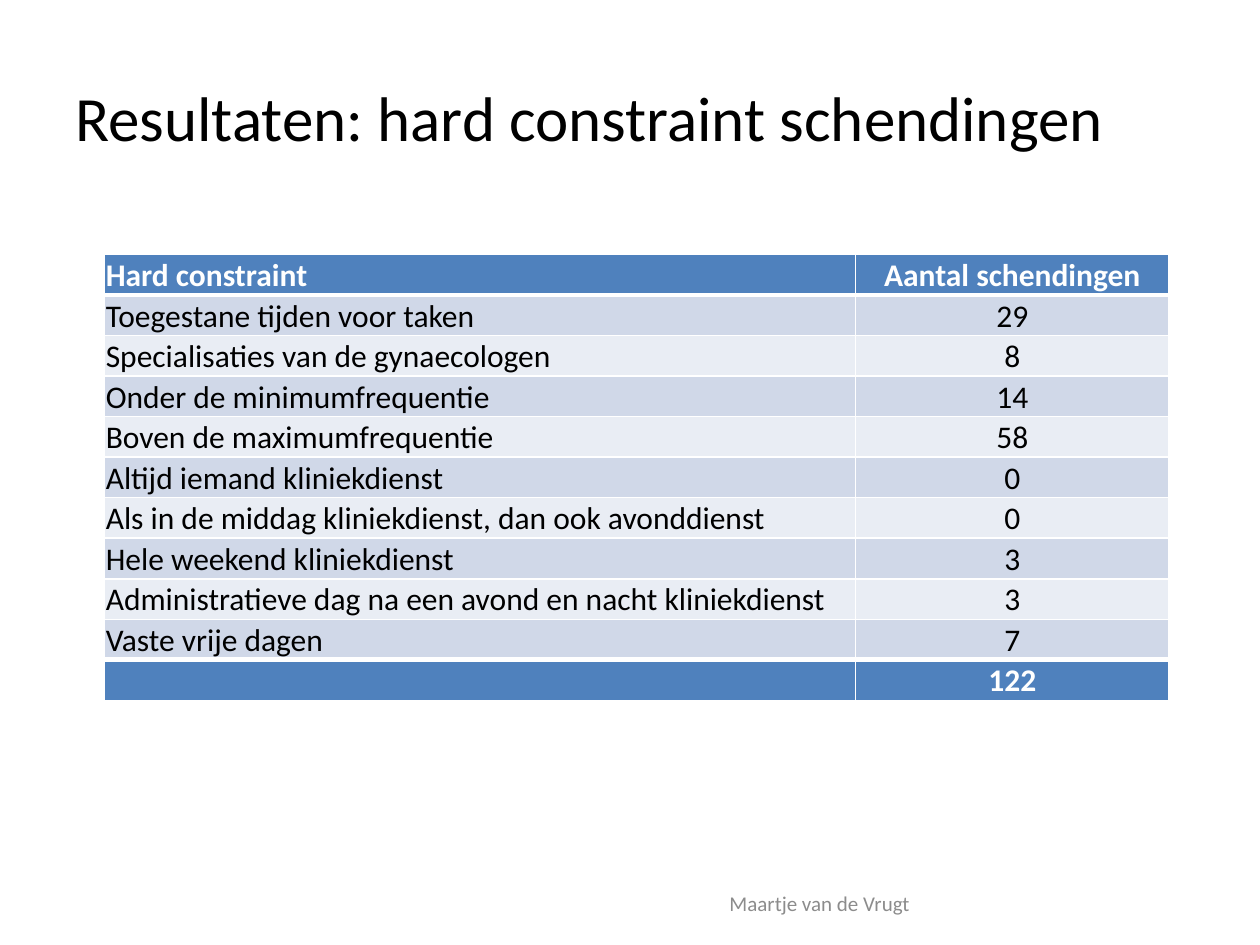
from lxml import etree
from pptx import Presentation
from pptx import util as u
from pptx.dml.color import RGBColor
from pptx.enum import text
from pptx.oxml.ns import qn

WHITE = RGBColor(0xFF, 0xFF, 0xFF)
BLACK = RGBColor(0x00, 0x00, 0x00)
GREY = RGBColor(0x8C, 0x8C, 0x8C)
BLUE = RGBColor(0x4F, 0x81, 0xBD)
BANDS = (RGBColor(0xE9, 0xED, 0xF4), RGBColor(0xD0, 0xD8, 0xE8))
LEFT, CENTER = text.PP_ALIGN.LEFT, text.PP_ALIGN.CENTER

ROWS = [
    ("Hard constraint", "Aantal schendingen"),
    ("Toegestane tijden voor taken", "29"),
    ("Specialisaties van de gynaecologen", "8"),
    ("Onder de minimumfrequentie", "14"),
    ("Boven de maximumfrequentie", "58"),
    ("Altijd iemand kliniekdienst", "0"),
    ("Als in de middag kliniekdienst, dan ook avonddienst", "0"),
    ("Hele weekend kliniekdienst", "3"),
    ("Administratieve dag na een avond en nacht kliniekdienst", "3"),
    ("Vaste vrije dagen", "7"),
    ("", "122"),
]


def write(paragraph, words, alignment, **font_format):
    paragraph.alignment = alignment
    if not words:
        return
    run = paragraph.add_run()
    run.text = words
    run.font.name = "Calibri"
    run.font.color.rgb = font_format.pop("color")
    for name, value in font_format.items():
        setattr(run.font, name, value)


def add_border(cell, side, points):
    """Add a white line; sides must come in the order L, R, T, B, before the fill."""
    properties = cell._tc.get_or_add_tcPr()
    line = etree.SubElement(properties, qn(f"a:ln{side}"), w=str(u.Pt(points)))
    fill = etree.SubElement(line, qn("a:solidFill"))
    etree.SubElement(fill, qn("a:srgbClr"), val=str(WHITE))


presentation = Presentation()
presentation.slide_width = u.Inches(10)
presentation.slide_height = u.Inches(7.5)
slide = presentation.slides.add_slide(presentation.slide_layouts[6])

# Title and footer
for words, box, alignment, size, color in [
    ("Resultaten: hard constraint schendingen", (0.5, 0.3, 9, 1.25), LEFT, 36, BLACK),
    ("Maartje van de Vrugt", (4.92, 6.97, 3.17, 0.4), CENTER, 12, GREY),
]:
    shape = slide.shapes.add_textbox(*map(u.Inches, box))
    frame = shape.text_frame
    frame.word_wrap = True
    frame.vertical_anchor = text.MSO_ANCHOR.MIDDLE
    write(frame.paragraphs[0], words, alignment, size=u.Pt(size), color=color)

# Table of violations, with header and total rows set off by heavy lines
last = len(ROWS) - 1
table = slide.shapes.add_table(
    len(ROWS), 2, *map(u.Inches, (0.83, 2.02, 8.45, 3.54))).table
table.first_row = table.horz_banding = False
for column, width in zip(table.columns, (5.96, 2.49)):
    column.width = u.Inches(width)

cell_format = {
    "margin_left": u.Inches(0.01),
    "margin_right": u.Inches(0.01),
    "margin_top": u.Inches(0.01),
    "margin_bottom": 0,
    "vertical_anchor": text.MSO_ANCHOR.BOTTOM,
}
for row, entries in enumerate(ROWS):
    strong = row in (0, last)
    for column, words in enumerate(entries):
        cell = table.cell(row, column)
        for name, value in cell_format.items():
            setattr(cell, name, value)
        add_border(cell, "L", 1)
        add_border(cell, "R", 1)
        add_border(cell, "T", 3 if row in (1, last) else 1)
        add_border(cell, "B", 3 if row in (0, last - 1) else 1)
        cell.fill.solid()
        cell.fill.fore_color.rgb = BLUE if strong else BANDS[row % 2]
        write(cell.text_frame.paragraphs[0], words, CENTER if column else LEFT,
              size=u.Pt(18), bold=strong, color=WHITE if strong else BLACK)

presentation.save("out.pptx")
